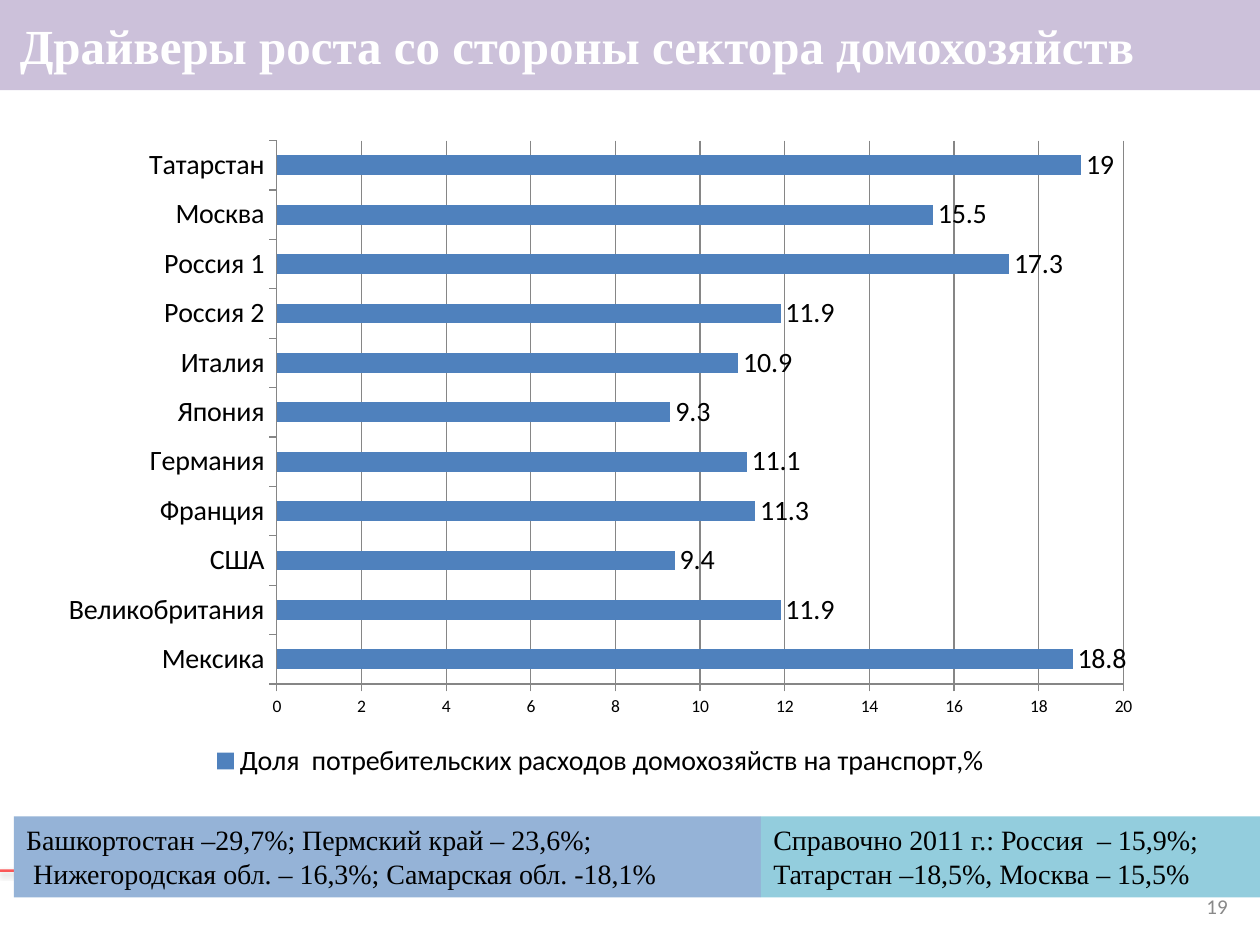
from dataclasses import dataclass
from lxml.etree import SubElement
from pptx import Presentation
from pptx.chart.data import CategoryChartData
from pptx.dml.color import RGBColor
from pptx.enum.chart import (XL_CHART_TYPE, XL_LABEL_POSITION,
                             XL_LEGEND_POSITION, XL_TICK_MARK)
from pptx.enum.shapes import MSO_CONNECTOR, MSO_SHAPE
from pptx.enum.text import MSO_ANCHOR, PP_ALIGN
from pptx.oxml import parse_xml
from pptx.oxml.ns import nsdecls, qn
from pptx.util import Cm, Pt

# Content
TITLE = "Драйверы роста со стороны сектора домохозяйств"
SERIES = "Доля  потребительских расходов домохозяйств на транспорт,%"
SHARES = [
    ("Мексика", 18.8), ("Великобритания", 11.9), ("США", 9.4),
    ("Франция", 11.3), ("Германия", 11.1), ("Япония", 9.3),
    ("Италия", 10.9), ("Россия 2", 11.9), ("Россия 1", 17.3),
    ("Москва", 15.5), ("Татарстан", 19),
]
# Notes: width in cm, fill, lines
NOTES = [
    (15.06, "95B3D7", ["Башкортостан –29,7%; Пермский край – 23,6%;",
                       " Нижегородская обл. – 16,3%; Самарская обл. -18,1%"]),
    (10.06, "93CDDD", ["Справочно 2011 г.: Россия  – 15,9%;",
                       "Татарстан –18,5%, Москва – 15,5%"]),
]
PAGE = "19"


@dataclass
class Theme:
    serif: str = "Times New Roman"
    sans: str = "Calibri"
    ink: str = "000000"
    white: str = "FFFFFF"
    band: str = "CCC1DA"
    bar: str = "4F81BD"
    grid: str = "868686"
    gray: str = "898989"
    rule: str = "FF0000"
    head: int = 28
    text: int = 16
    small: int = 12
    tick: int = 10


T = Theme()
WIDE, HIGH = 25.4, 19.05


def rgb(code):
    return RGBColor.from_string(code)


def place(shape, left, top, width, height):
    shape.left, shape.top = Cm(left), Cm(top)
    shape.width, shape.height = Cm(width), Cm(height)


def style(font, size, color=T.ink, face=T.sans, bold=False):
    font.size, font.name, font.bold = Pt(size), face, bold
    font.color.rgb = rgb(color)


def write(shape, lines, size=T.text, color=T.ink, face=T.serif, bold=False,
          align=PP_ALIGN.LEFT, anchor=MSO_ANCHOR.TOP, pads=(0.25, 0.25)):
    frame = shape.text_frame
    frame.word_wrap = True
    frame.vertical_anchor = anchor
    frame.margin_left, frame.margin_right = map(Cm, pads)
    frame.margin_top = frame.margin_bottom = Cm(0.13)
    for num, line in enumerate(lines):
        para = frame.add_paragraph() if num else frame.paragraphs[0]
        para.alignment = align
        run = para.add_run()
        run.text = line
        style(run.font, size, color, face, bold)


deck = Presentation()
deck.slide_width, deck.slide_height = Cm(WIDE), Cm(HIGH)
slide = deck.slides.add_slide(deck.slide_layouts[5])
shapes = slide.shapes

# Red rule, see-through, with a soft shadow
rule = shapes.add_connector(MSO_CONNECTOR.STRAIGHT,
                            Cm(0), Cm(17.55), Cm(WIDE), Cm(17.55))
rule.line.width = Pt(1.5)
rule.line.color.rgb = rgb(T.rule)
tint = rule.line.fill._xPr.find(".//" + qn("a:srgbClr"))
SubElement(tint, qn("a:alpha"), val="64000")
rule._element.spPr.append(parse_xml(
    f'<a:effectLst {nsdecls("a")}><a:outerShdw blurRad="39400" dist="20300" '
    'dir="5400000" rotWithShape="0"><a:srgbClr val="000000">'
    '<a:alpha val="38000"/></a:srgbClr></a:outerShdw></a:effectLst>'))

# Page number
page = shapes.add_textbox(Cm(23.7), Cm(17.75), Cm(1.3), Cm(1.02))
write(page, [PAGE], size=T.small, color=T.gray, face=T.sans,
      align=PP_ALIGN.RIGHT, anchor=MSO_ANCHOR.MIDDLE)

# Title band
title = shapes.title
place(title, 0, 0, WIDE, 1.82)
title.fill.solid()
title.fill.fore_color.rgb = rgb(T.band)
write(title, [TITLE], size=T.head, color=T.white, bold=True,
      align=PP_ALIGN.JUSTIFY, anchor=MSO_ANCHOR.MIDDLE, pads=(0.4, 0.25))

# Bar chart
data = CategoryChartData()
data.categories = [name for name, _ in SHARES]
data.add_series(SERIES, [share for _, share in SHARES])
chart = shapes.add_chart(XL_CHART_TYPE.BAR_CLUSTERED, Cm(0.94), Cm(2.57),
                         Cm(22.33), Cm(13.23), data).chart
style(chart.font, T.tick)
chart.has_title = False
chart.has_legend = True
chart.legend.position = XL_LEGEND_POSITION.BOTTOM
chart.legend.include_in_layout = False
style(chart.legend.font, T.text)

plot = chart.plots[0]
plot.gap_width = 150
plot.vary_by_categories = False
fill = plot.series[0].format.fill
fill.solid()
fill.fore_color.rgb = rgb(T.bar)
plot.has_data_labels = True
labels = plot.data_labels
labels.show_value = True
labels.position = XL_LABEL_POSITION.OUTSIDE_END
style(labels.font, T.text)

for axis, size in ((chart.category_axis, T.text), (chart.value_axis, T.tick)):
    axis.major_tick_mark = XL_TICK_MARK.OUTSIDE
    axis.format.line.color.rgb = rgb(T.grid)
    style(axis.tick_labels.font, size)
axis = chart.value_axis
axis.minimum_scale, axis.maximum_scale, axis.major_unit = 0, 20, 2
axis.has_major_gridlines = True
axis.major_gridlines.format.line.color.rgb = rgb(T.grid)

# Notes side by side, ending at the right edge
left = WIDE - sum(width for width, _, _ in NOTES)
for width, color, lines in NOTES:
    note = shapes.add_shape(MSO_SHAPE.RECTANGLE, Cm(left), Cm(16.46),
                            Cm(width), Cm(1.63))
    note.shadow.inherit = False
    note.fill.solid()
    note.fill.fore_color.rgb = rgb(color)
    note.line.fill.background()
    write(note, lines)
    left += width

deck.save("out.pptx")
